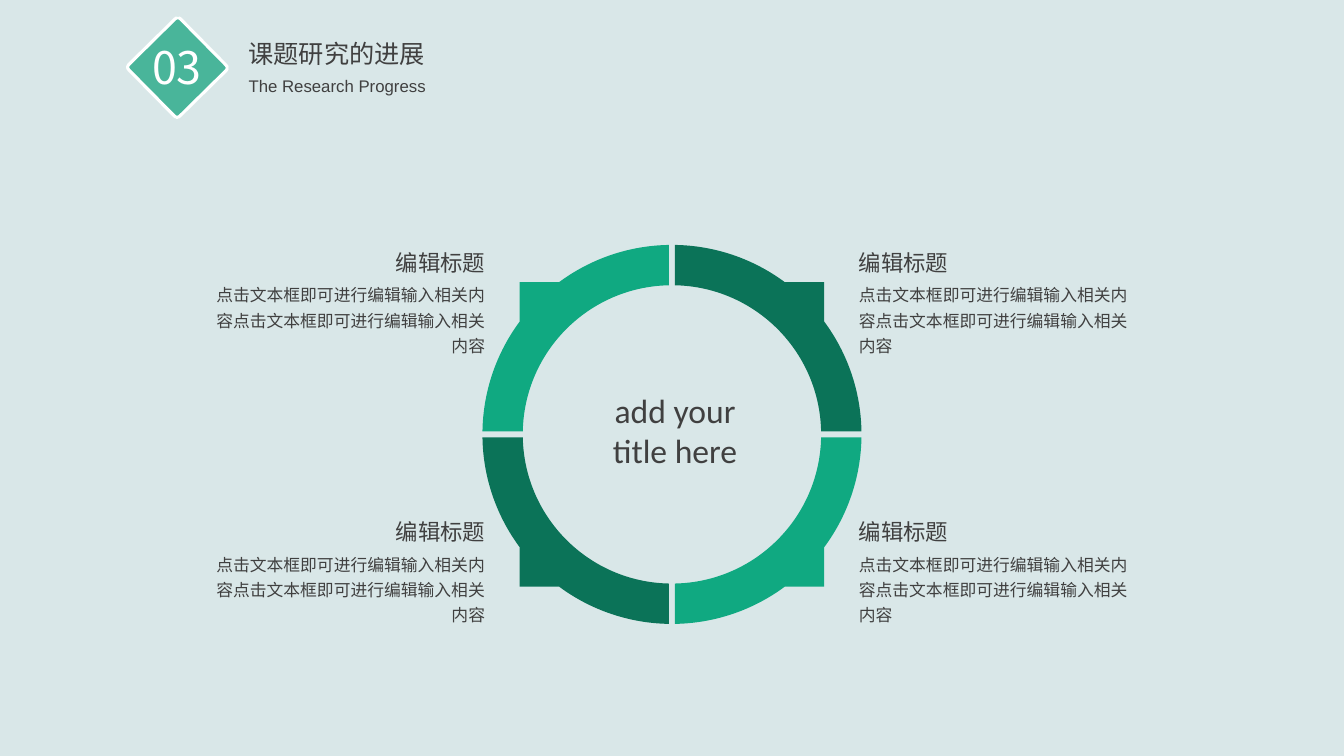
import math

from lxml import etree
from pptx import Presentation
from pptx.dml.color import RGBColor
from pptx.enum import shapes, text
from pptx.oxml import ns
from pptx.util import Inches, Pt

CJK = "Noto Sans CJK SC"
GREY, WHITE = "404040", "FFFFFF"
LIGHT, DARK = "10A981", "0B7358"
LEFT, CENTER, RIGHT = text.PP_ALIGN.LEFT, text.PP_ALIGN.CENTER, text.PP_ALIGN.RIGHT
WIDTH, HEIGHT = 13.33, 7.5
CENTER_X, CENTER_Y = WIDTH / 2, 4.31
OUTER, INNER, HALF_GAP, TAB = 1.88, 1.48, 0.03, 1.51
BODY = "点击文本框即可进行编辑输入相关内容" * 2


def paint(fill, color):
    """Give a fill one solid colour."""
    fill.solid()
    fill.fore_color.rgb = RGBColor.from_string(color)


def set_text(sp, words, size, font=CJK, color=GREY, align=LEFT, spacing=None):
    """Write one formatted paragraph into a shape."""
    tf = sp.text_frame
    tf.text = words
    tf.word_wrap = True
    tf.auto_size = text.MSO_AUTO_SIZE.SHAPE_TO_FIT_TEXT
    p = tf.paragraphs[0]
    p.alignment = align
    p.line_spacing = spacing
    r = p.runs[0]
    r.font.size = Pt(size)
    r.font.name = font
    r.font.color.rgb = RGBColor.from_string(color)
    etree.SubElement(r.font._element, ns.qn("a:ea")).set("typeface", font)


def add_text(s, box, words, size, **style):
    """Add a text box."""
    sp = s.shapes.add_textbox(*map(Inches, box))
    set_text(sp, words, size, **style)


def add_diamond(s, box, adjust, color, outline=None):
    """Add a rounded square standing on its corner."""
    sp = s.shapes.add_shape(shapes.MSO_SHAPE.ROUNDED_RECTANGLE, *map(Inches, box))
    sp.adjustments[0] = adjust
    sp.rotation = 45.4
    sp.shadow.inherit = False
    paint(sp.fill, color)
    if outline:
        paint(sp.line.fill, outline)
        sp.line.width = Pt(2.25)
    else:
        sp.line.fill.background()


def add_subtitle(s, box, words):
    """Add the unfilled shape that holds the English heading."""
    sp = s.shapes.add_shape(shapes.MSO_SHAPE.SNIP_1_RECTANGLE, *map(Inches, box))
    sp.adjustments[0] = 0
    sp.shadow.inherit = False
    sp.fill.background()
    sp.line.fill.background()
    set_text(sp, words, 12, font="Arial", align=CENTER)


def arc(radius, start, end):
    """Return the four Bezier points of a circular arc."""
    k = 4 / 3 * math.tan((end - start) / 4)
    x1, y1 = radius * math.cos(start), radius * math.sin(start)
    x2, y2 = radius * math.cos(end), radius * math.sin(end)
    return [(x1, y1), (x1 - k * y1, y1 + k * x1), (x2 + k * y2, y2 - k * x2), (x2, y2)]


def bend(sp, starts):
    """Turn each group of three line segments into one curve."""
    lines = list(sp._element.iter(ns.qn("a:lnTo")))
    for start in starts:
        first, *others = lines[start:start + 3]
        curve = etree.Element(ns.qn("a:cubicBezTo"))
        first.addprevious(curve)
        for line in (first, *others):
            curve.append(line[0])
            line.getparent().remove(line)


def add_quadrant(s, side_x, side_y, color):
    """Add a quarter ring with a square tab, mirrored by the two signs."""
    quarter = math.pi / 2
    outer_cut = math.asin(HALF_GAP / OUTER)
    inner_cut = math.asin(HALF_GAP / INNER)
    tab_cut = math.acos(TAB / OUTER)
    outline = (arc(OUTER, outer_cut, tab_cut) + [(TAB, TAB)]
               + arc(OUTER, quarter - tab_cut, quarter - outer_cut)
               + arc(INNER, quarter - inner_cut, inner_cut))
    points = [(Inches(CENTER_X + side_x * x), Inches(CENTER_Y + side_y * y))
              for x, y in outline]
    builder = s.shapes.build_freeform(*points[0])
    builder.add_line_segments(points[1:], close=True)
    sp = builder.convert_to_shape()
    bend(sp, (0, 5, 9))
    sp.shadow.inherit = False
    paint(sp.fill, color)
    sp.line.fill.background()


def add_caption(s, side_x, top):
    """Add body text and its heading beside the ring."""
    body_left, head_left, align = (8.42, 8.42, LEFT) if side_x > 0 else (1.98, 3.5, RIGHT)
    add_text(s, (body_left, top + 0.31, 2.93, 0.86), BODY, 12, align=align, spacing=1.25)
    add_text(s, (head_left, top, 1.41, 0.37), "编辑标题", 16, align=align)


def main():
    """Build the slide and save it."""
    prs = Presentation()
    prs.slide_width, prs.slide_height = Inches(WIDTH), Inches(HEIGHT)
    s = prs.slides.add_slide(prs.slide_layouts[6])
    paint(s.background.fill, "D9E7E8")

    add_diamond(s, (1.39, 0.3, 0.74, 0.74), 0.059, LIGHT)
    add_diamond(s, (1.4, 0.31, 0.72, 0.72), 0.05, "49B59A", WHITE)
    add_text(s, (1.37, 0.34, 0.77, 0.64), "03", 32, color=WHITE, align=CENTER)
    add_text(s, (0.63, 0.33, 5.42, 0.4), "课题研究的进展", 18, align=CENTER)
    add_subtitle(s, (0.6, 0.7, 5.49, 0.3), "The Research Progress")

    for side_x, side_y in ((-1, -1), (1, 1), (-1, 1), (1, -1)):
        add_quadrant(s, side_x, side_y, LIGHT if side_x == side_y else DARK)
    for side_x in (1, -1):
        for top in (2.42, 5.09):
            add_caption(s, side_x, top)
    add_text(s, (5.87, 3.82, 1.65, 0.91), "add your title here", 24,
             font="Calibri", align=CENTER)
    prs.save("out.pptx")


if __name__ == "__main__":
    main()
